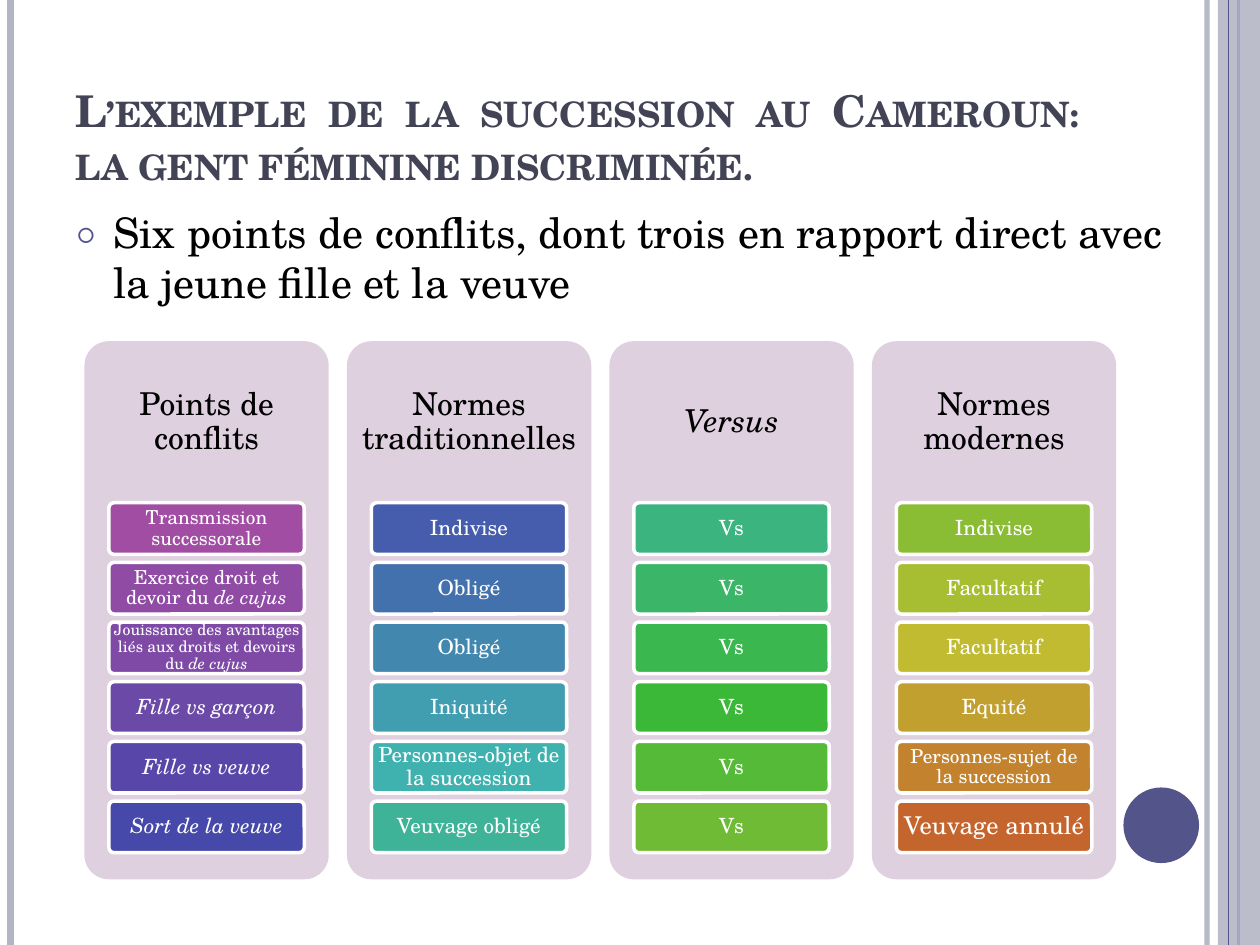
from lxml.etree import SubElement
from pptx import Presentation
from pptx.dml.color import RGBColor
from pptx.enum.shapes import MSO_CONNECTOR, MSO_SHAPE
from pptx.enum.text import MSO_ANCHOR as Anchor, PP_ALIGN as Align
from pptx.oxml.ns import qn
from pptx.util import Pt

FONT = "TeX Gyre Schola"
WHITE = RGBColor(0xFF, 0xFF, 0xFF)
BLACK = RGBColor(0x00, 0x00, 0x00)
SLATE = RGBColor(0x42, 0x44, 0x56)
INDIGO = RGBColor(0x53, 0x54, 0x8A)
MIST = RGBColor(0xB3, 0xB4, 0xC4)
LILAC = RGBColor(0xDF, 0xD0, 0xE0)
TILE_HUES = [
    [RGBColor.from_string(code) for code in row.split()]
    for row in (
        "A04DA3 904CA4 7E4AA6 6B49A7 5847A9 4649AA",
        "455DAC 4371AD 4287AE 419DB0 3FB1AE 3EB398",
        "3CB480 3BB668 3AB74F 3CB838 55BA37 6FBB35",
        "8ABD34 A7BE33 C0BB31 C1A030 C3832E C4652D",
    )
]

# Text between asterisks is italic; each tile is (text, size).
COLUMNS = [
    ("Points de conflits", [
        ("Transmission successorale", 11),
        ("Exercice droit et devoir du *de cujus*", 11),
        ("Jouissance des avantages liés aux droits et devoirs du *de cujus*", 9),
        ("*Fille vs garçon*", 12),
        ("*Fille vs veuve*", 12),
        ("*Sort de la veuve*", 12),
    ]),
    ("Normes traditionnelles", [
        ("Indivise", 12),
        ("Obligé", 12),
        ("Obligé", 12),
        ("Iniquité", 12),
        ("Personnes-objet de la succession", 12),
        ("Veuvage obligé", 12),
    ]),
    ("*Versus*", [("Vs", 12)] * 6),
    ("Normes modernes", [
        ("Indivise", 12),
        ("Facultatif", 12),
        ("Facultatif", 12),
        ("Equité", 12),
        ("Personnes-sujet de la succession", 11),
        ("Veuvage annulé", 14),
    ]),
]


def set_alpha(fill_parent, percent):
    color = fill_parent.find(".//" + qn("a:srgbClr"))
    SubElement(color, qn("a:alpha")).set("val", str(percent * 1000))


def add_rule(slide, x, height, color, weight):
    rule = slide.shapes.add_connector(MSO_CONNECTOR.STRAIGHT, Pt(x), 0, Pt(x), Pt(height))
    rule.line.color.rgb = color
    rule.line.width = Pt(weight)
    SubElement(rule._element.spPr, qn("a:effectLst"))
    return rule


def add_filled(slide, preset, box, color):
    shape = slide.shapes.add_shape(preset, *map(Pt, box))
    shape.shadow.inherit = False
    shape.fill.solid()
    shape.fill.fore_color.rgb = color
    shape.line.fill.background()
    return shape


def add_rounded(slide, box, color):
    shape = add_filled(slide, MSO_SHAPE.ROUNDED_RECTANGLE, box, color)
    shape.adjustments[0] = 0.1
    return shape


def write(shape, text, size, color, align=Align.CENTER, anchor=Anchor.MIDDLE,
          insets=(7.2, 3.6), bold=None):
    """Fill the shape with one paragraph; text between asterisks is italic."""
    frame = shape.text_frame
    frame.word_wrap = True
    frame.vertical_anchor = anchor
    frame.margin_left = frame.margin_right = Pt(insets[0])
    frame.margin_top = frame.margin_bottom = Pt(insets[1])
    paragraph = frame.paragraphs[0]
    paragraph.alignment = align
    for index, part in enumerate(text.split("*")):
        if part:
            run = paragraph.add_run()
            run.text = part
            run.font.name = FONT
            run.font.size = Pt(size)
            run.font.color.rgb = color
            run.font.bold = bold
            run.font.italic = True if index % 2 else None
    return paragraph


def add_frame_decor(slide, width, height):
    set_alpha(add_rule(slide, 689.75, height, MIST, 3)._element, 93)
    add_rule(slide, 6, height, MIST, 4.5)
    add_rule(slide, 707.75, height, INDIGO, 1.5)
    band = add_filled(slide, MSO_SHAPE.RECTANGLE, (696, 0, width - 696, height), MIST)
    set_alpha(band._element.spPr, 87)
    add_rule(slide, 702, height, INDIGO, 0.75)
    add_filled(slide, MSO_SHAPE.OVAL, (642, 450, 43.2, 43.2), INDIGO)


def add_title(slide, box):
    title = write(
        slide.shapes.add_textbox(*map(Pt, box)),
        "L’exemple de la succession au Cameroun: la gent féminine discriminée.",
        25, SLATE, Align.JUSTIFY, Anchor.BOTTOM, bold=True)
    title.runs[0].font._element.set("cap", "small")


def add_intro(slide, box):
    intro = write(
        slide.shapes.add_textbox(*map(Pt, box)),
        "Six points de conflits, dont trois en rapport direct avec la jeune fille et la veuve",
        24, BLACK, Align.LEFT, Anchor.TOP)
    intro.space_before = Pt(6)
    props = intro._p.get_or_add_pPr()
    props.set("marL", str(Pt(21.6)))
    props.set("indent", str(-Pt(21.6)))
    bullet_color = SubElement(props, qn("a:buClr"))
    SubElement(bullet_color, qn("a:srgbClr")).set("val", str(INDIGO))
    SubElement(props, qn("a:buSzPct")).set("val", "70000")
    SubElement(props, qn("a:buFont")).set("typeface", FONT)
    SubElement(props, qn("a:buChar")).set("char", "○")


def add_column(slide, box, heading, tiles, hues):
    left, top, width, height = box
    add_rounded(slide, box, LILAC)
    header_height = height * 0.3
    header = slide.shapes.add_textbox(*map(Pt, (left, top, width, header_height)))
    write(header, heading, 18, BLACK, insets=(5, 5)).line_spacing = 0.9
    for row, ((text, size), hue) in enumerate(zip(tiles, hues)):
        tile_top = top + header_height + row * 34.1
        tile = add_rounded(slide, (left + width * 0.1, tile_top, width * 0.8, 29.5), hue)
        tile.line.color.rgb = WHITE
        tile.line.width = Pt(2)
        write(tile, text, size, WHITE, insets=(1, 1)).line_spacing = 0.9


def add_comparison(slide, box):
    left, top, width, height = box
    pitch = 150
    column_width = width - pitch * (len(COLUMNS) - 1)
    for index, ((heading, tiles), hues) in enumerate(zip(COLUMNS, TILE_HUES)):
        column_box = (left + index * pitch, top, column_width, height)
        add_column(slide, column_box, heading, tiles, hues)


def main():
    width, height = 720, 540
    deck = Presentation()
    deck.slide_width, deck.slide_height = Pt(width), Pt(height)
    slide = deck.slides.add_slide(deck.slide_layouts[6])
    add_frame_decor(slide, width, height)
    add_title(slide, (36, 21.6, 588, 90))
    add_intro(slide, (36, 114.5, 641.5, 65))
    add_comparison(slide, (48.25, 195, 589.6, 307.5))
    deck.save("out.pptx")


if __name__ == "__main__":
    main()
